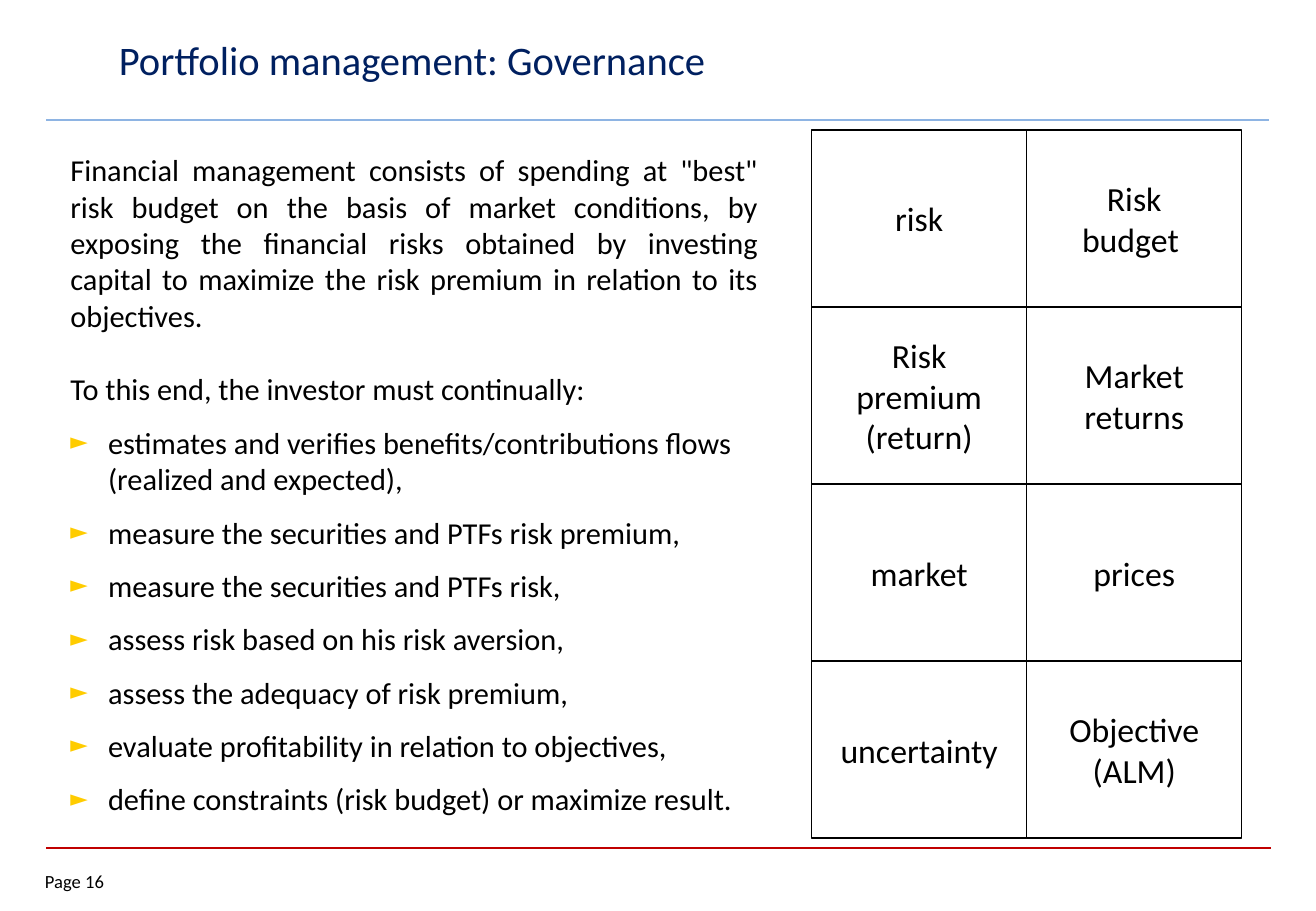
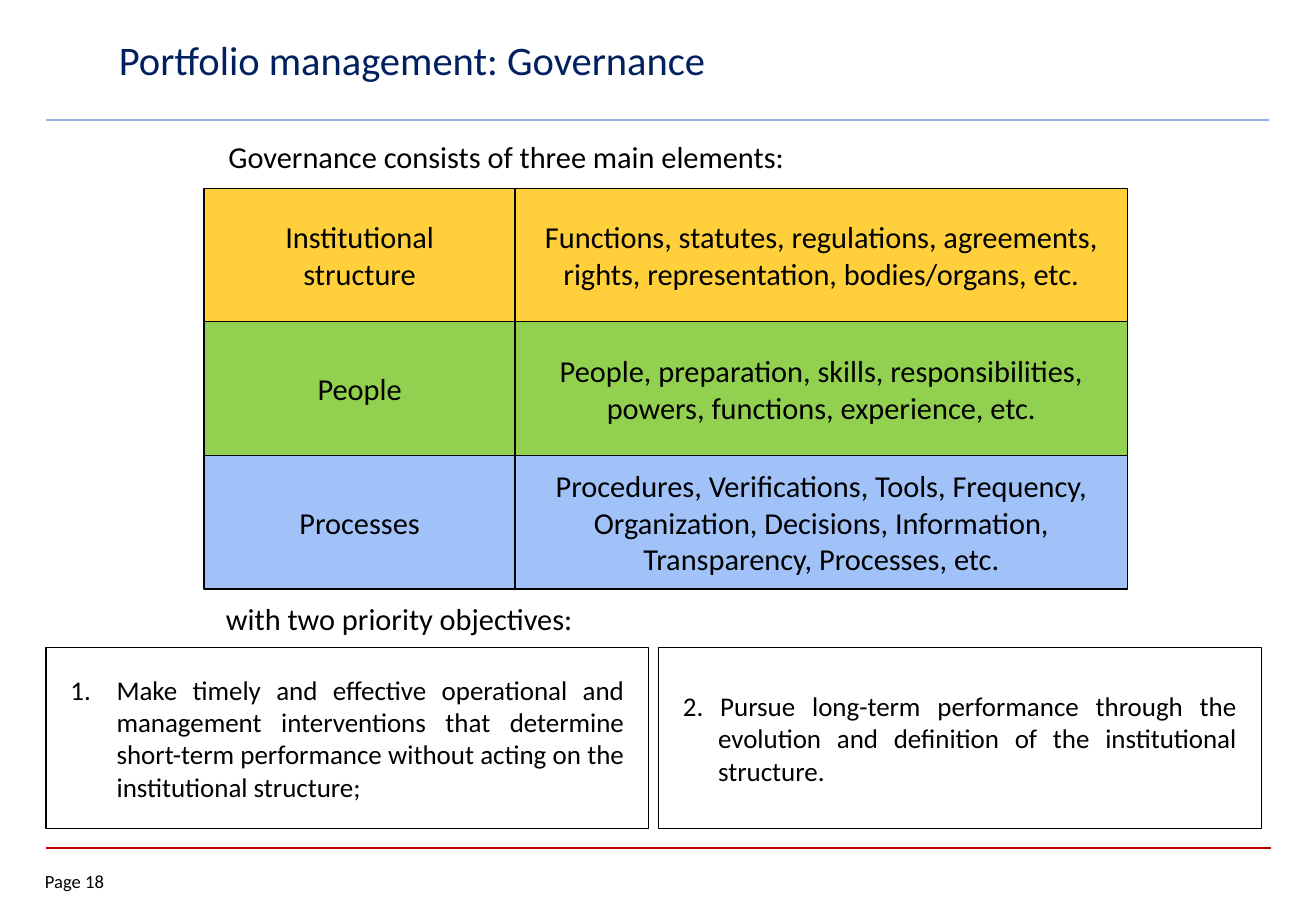
import dataclasses

import pptx
import pptx.dml.color
import pptx.enum.shapes
import pptx.enum.text
import pptx.oxml
import pptx.oxml.ns
import pptx.util
from lxml import etree

Inches, Pt = pptx.util.Inches, pptx.util.Pt
RGB = pptx.dml.color.RGBColor.from_string
ALIGN = pptx.enum.text.PP_ALIGN
SHAPE = pptx.enum.shapes.MSO_SHAPE
NS = pptx.oxml.ns.nsdecls("a")


@dataclasses.dataclass(frozen=True)
class Theme:
    font: str = "Calibri"
    ink: str = "000000"
    title: str = "002060"
    title_rule: str = "8EB4E3"
    footer_rule: str = "C00000"
    bullet: str = "FFCC00"
    structure: str = "FFD03B"
    people: str = "92D050"
    processes: str = "A0C2F8"
    title_size: int = 24
    grid_size: int = 20
    body_size: int = 18
    objective_size: int = 16
    page_size: int = 11


theme = Theme()


def add_box(slide, area, texts, size, align=ALIGN.CENTER, outlined=False, fill=None,
            color=theme.ink, inset=(0.2, 0.05)):
    """Add a text box or an outlined rectangle and return its paragraphs."""
    place = [Inches(length) for length in area]
    if outlined:
        box = slide.shapes.add_shape(SHAPE.RECTANGLE, *place)
        box.shadow.inherit = False
        box.line.color.rgb = RGB(theme.ink)
        box.line.width = Pt(0.75)
        if fill:
            box.fill.solid()
            box.fill.fore_color.rgb = RGB(fill)
        else:
            box.fill.background()
    else:
        box = slide.shapes.add_textbox(*place)
    frame = box.text_frame
    frame.word_wrap = True
    frame.vertical_anchor = pptx.enum.text.MSO_ANCHOR.MIDDLE
    frame.margin_left = frame.margin_right = Inches(inset[0])
    frame.margin_top = frame.margin_bottom = Inches(inset[1])
    for index, text in enumerate(texts):
        paragraph = frame.add_paragraph() if index else frame.paragraphs[0]
        paragraph.alignment = align
        run = paragraph.add_run()
        run.text = text
        run.font.name = theme.font
        run.font.size = Pt(size)
        run.font.color.rgb = RGB(color)
    return frame.paragraphs


def set_indent(paragraph, left, first, marker=()):
    """Indent a paragraph and give it the bullet elements in marker."""
    properties = paragraph._p.get_or_add_pPr()
    properties.set("marL", str(Inches(left)))
    properties.set("indent", str(Inches(first)))
    for element in marker:
        properties.append(pptx.oxml.parse_xml(element))


prs = pptx.Presentation()
prs.slide_width, prs.slide_height = Inches(10.83), Inches(7.5)

# Shared title, rules and page number
slides = []
for page in (16, 18):
    slide = prs.slides.add_slide(prs.slide_layouts[6])
    slides.append(slide)
    for right, y, color, width in ((10.46, 6.98, theme.footer_rule, 1),
                                   (10.44, 0.99, theme.title_rule, 1.5)):
        rule = slide.shapes.add_connector(pptx.enum.shapes.MSO_CONNECTOR.STRAIGHT,
                                          Inches(0.38), Inches(y), Inches(right), Inches(y))
        rule.line.color.rgb = RGB(color)
        rule.line.width = Pt(width)
        etree.SubElement(rule._element.spPr, pptx.oxml.ns.qn("a:effectLst"))
    add_box(slide, (0.37, 7.14, 0.73, 0.22), [f"Page {page}"], theme.page_size,
            ALIGN.LEFT, inset=(0, 0))
    title = add_box(slide, (0.38, 0, 8.81, 0.98), ["Portfolio management: Governance"],
                    theme.title_size, ALIGN.LEFT, color=theme.title, inset=(0.1, 0.05))
    set_indent(title[0], 0.5, 0)
budget_slide, elements_slide = slides

# Risk budget: the investor's tasks
tasks = [
    "estimates and verifies benefits/contributions flows (realized and expected),",
    "measure the securities and PTFs risk premium,",
    "measure the securities and PTFs risk,",
    "assess risk based on his risk aversion,",
    "assess the adequacy of risk premium,",
    "evaluate profitability in relation to objectives,",
    "define constraints (risk budget) or maximize result.",
]
intro, lead_in, *task_lines = add_box(budget_slide, (0.38, 1.07, 6.06, 5.83), [
    'Financial management consists of spending at "best" risk budget on the basis of market '
    "conditions, by exposing the financial risks obtained by investing capital to maximize "
    "the risk premium in relation to its objectives.",
    "To this end, the investor must continually:",
    *tasks,
], theme.body_size, ALIGN.LEFT)
intro.alignment = ALIGN.JUSTIFY
lead_in.space_before = Pt(22)
lead_in.space_after = Pt(10)
arrow_marker = (
    f'<a:buClr {NS}><a:srgbClr val="{theme.bullet}"/></a:buClr>',
    f'<a:buSzPct {NS} val="75000"/>',
    f'<a:buFont {NS} typeface="{theme.font}"/>',
    f'<a:buChar {NS} char="►"/>',
)
for task_line in task_lines:
    set_indent(task_line, 0.31, -0.31, arrow_marker)
    task_line.space_after = Pt(10)

# Risk budget: grid of paired concepts
concepts = [
    (["risk"], ["Risk", "budget "]),
    (["Risk premium", "(return)"], ["Market returns"]),
    (["market"], ["prices"]),
    (["uncertainty"], ["Objective", "(ALM)"]),
]
cell_width, cell_height = 1.77, 5.83 / len(concepts)
for row, pair in enumerate(concepts):
    for column, concept in enumerate(pair):
        add_box(budget_slide, (6.68 + column * cell_width, 1.07 + row * cell_height,
                               cell_width, cell_height),
                concept, theme.grid_size, outlined=True)

# Governance: three main elements
for area, sentence in (
    ((1.68, 1.01, 7.6, 0.55), "Governance consists of three main elements:"),
    ((1.66, 4.86, 7.59, 0.47), "with two priority objectives:"),
):
    add_box(elements_slide, area, [sentence], theme.body_size, ALIGN.JUSTIFY)

elements = [
    (theme.structure, "Institutional structure",
     "Functions, statutes, regulations, agreements, rights, representation, "
     "bodies/organs, etc."),
    (theme.people, "People",
     "People, preparation, skills, responsibilities, powers, functions, experience, etc."),
    (theme.processes, "Processes",
     "Procedures, Verifications, Tools, Frequency, Organization, Decisions, Information, "
     "Transparency, Processes, etc."),
]
element_height = 1.1
for row, (color, element, details) in enumerate(elements):
    for left, width, text in ((1.68, 2.56, element), (4.24, 5.04, details)):
        add_box(elements_slide, (left, 1.55 + row * element_height, width, element_height),
                [text], theme.body_size, outlined=True, fill=color)

# Governance: two priority objectives
number_marker = (f'<a:buFont {NS} typeface="+mj-lt"/>',
                 f'<a:buAutoNum {NS} type="arabicPeriod"/>')
objectives = [
    (0.38, 0.38, number_marker,
     "Make timely and effective operational and management interventions that determine "
     "short-term performance without acting on the institutional structure;"),
    (5.42, 0.29, (),
     "2. Pursue long-term performance through the evolution and definition of the "
     "institutional structure."),
]
for left, hanging, marker, objective in objectives:
    lines = add_box(elements_slide, (left, 5.33, 4.96, 1.49), [objective],
                    theme.objective_size, ALIGN.JUSTIFY, outlined=True)
    set_indent(lines[0], hanging, -hanging, marker)

prs.save("out.pptx")
